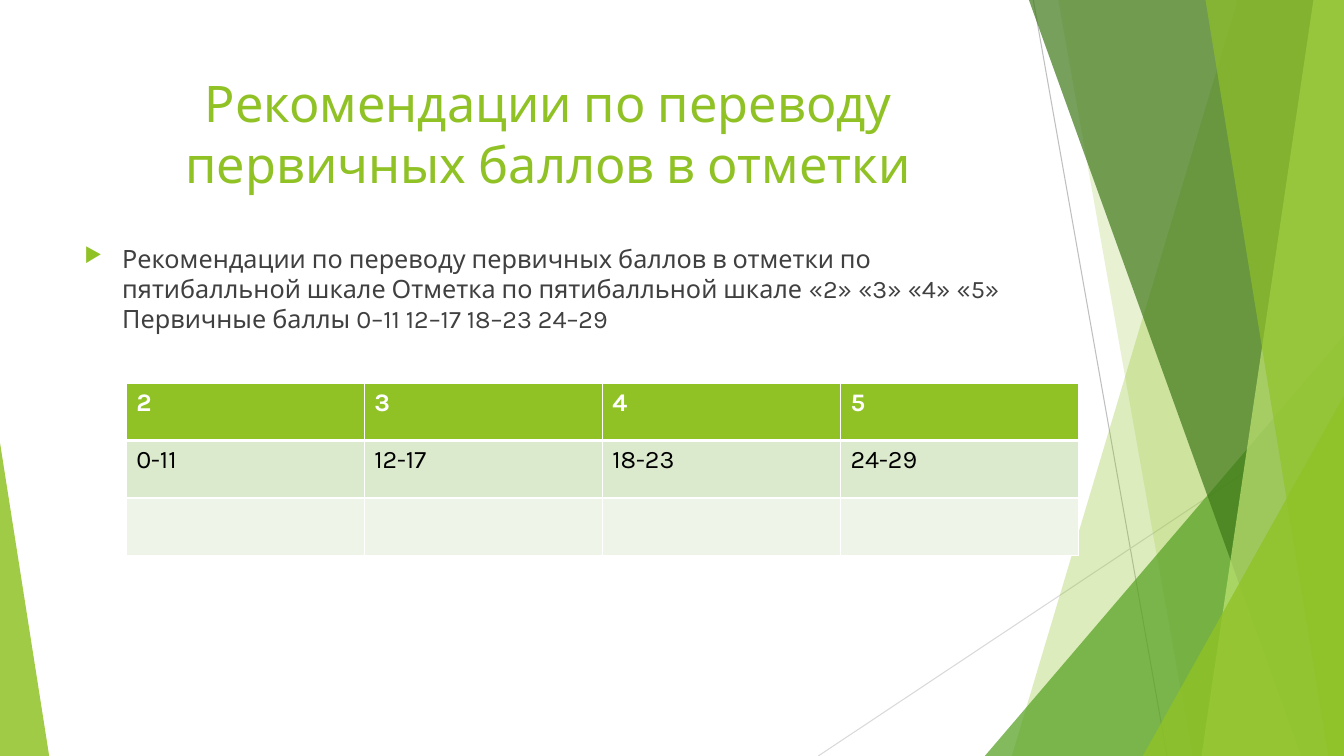
from dataclasses import dataclass

from lxml import etree
from pptx import Presentation
from pptx.dml.color import RGBColor
from pptx.enum.shapes import MSO_CONNECTOR, MSO_SHAPE
from pptx.enum.text import PP_ALIGN
from pptx.oxml import parse_xml
from pptx.oxml.ns import qn
from pptx.util import Cm, Pt

LINE = MSO_CONNECTOR.STRAIGHT
TRIANGLE = MSO_SHAPE.ISOSCELES_TRIANGLE
LEFT, CENTER = PP_ALIGN.LEFT, PP_ALIGN.CENTER

NS = 'xmlns:a="http://schemas.openxmlformats.org/drawingml/2006/main"'
FONT = "Karla"
GREEN, WHITE, BLACK, GREY = "90C226", "FFFFFF", "000000", "404040"
WIDE, HIGH = 33.87, 19.05
TITLE = "Рекомендации по переводу первичных баллов в отметки"
BODY = (
    "Рекомендации по переводу первичных баллов в отметки по пятибалльной шкале "
    "Отметка по пятибалльной шкале «2» «3» «4» «5» "
    "Первичные баллы 0–11 12–17 18–23 24–29"
)


@dataclass
class Ray:
    start: tuple[float, float]
    end: tuple[float, float]
    color: str


@dataclass
class Band:
    """Area from a slanted left edge to the right side of the slide."""
    top: float
    foot: float
    color: str
    alpha: int


@dataclass
class Wedge:
    """Right triangle standing on the foot of the slide."""
    left: float
    top: float
    width: float
    tip: float
    color: str
    alpha: int


@dataclass
class Row:
    texts: list[str]
    fill: str
    color: str
    bold: bool
    above: float
    below: float


RAYS = [
    Ray((26.04, 0), (29.41, HIGH), "BFBFBF"),
    Ray((WIDE, 10.24), (20.62, HIGH), "D9D9D9"),
]
FACETS = [
    Band(31.19, 25.5, GREEN, 30),
    Band(26.67, 30.05, GREEN, 20),
    Wedge(24.82, 8.46, 9.05, 1, "54A021", 72),
    Band(25.93, 32.79, "3F7819", 70),
    Band(33.1, 30.28, "C0E474", 70),
    Band(30.38, 33.48, GREEN, 65),
    Wedge(28.8, 9.98, 5.07, 1, GREEN, 80),
    Wedge(0, 11.15, 1.24, 0, GREEN, 85),
]
ROWS = [
    Row(["2", "3", "4", "5"], GREEN, WHITE, True, 1, 3),
    Row(["0-11", "12-17", "18-23", "24-29"], "DBE9CD", BLACK, False, 3, 1),
    Row([""] * 4, "EEF4E8", BLACK, False, 1, 1),
]


def paint(target, color: str) -> None:
    target.solid()
    target.fore_color.rgb = RGBColor.from_string(color)


def draw_ray(slide, ray: Ray) -> None:
    ends = [Cm(n) for n in ray.start + ray.end]
    line = slide.shapes.add_connector(LINE, *ends)
    paint(line.line.fill, ray.color)
    line.line.width = Pt(0.75)
    etree.SubElement(line._element.spPr, qn("a:effectLst"))


def draw_facet(slide, facet: Band | Wedge) -> None:
    if isinstance(facet, Band):
        form = slide.shapes.build_freeform(Cm(facet.top), Cm(0))
        form.add_line_segments([
            (Cm(WIDE), Cm(0)), (Cm(WIDE), Cm(HIGH)), (Cm(facet.foot), Cm(HIGH)),
        ])
        shape = form.convert_to_shape()
    else:
        shape = slide.shapes.add_shape(
            TRIANGLE, Cm(facet.left), Cm(facet.top),
            Cm(facet.width), Cm(HIGH - facet.top))
        shape.adjustments[0] = facet.tip
    shape.shadow.inherit = False
    shape.line.fill.background()
    paint(shape.fill, facet.color)
    tint = shape._element.spPr.find(".//" + qn("a:srgbClr"))
    etree.SubElement(tint, qn("a:alpha"), val=str(facet.alpha * 1000))


def style(para, size: float, color: str, bold: bool = False) -> None:
    para.font.name = FONT
    para.font.size = Pt(size)
    para.font.bold = bold
    paint(para.font.fill, color)


def add_text(slide, top: float, height: float, text: str,
             size: float, color: str, align):
    box = slide.shapes.add_textbox(Cm(1.88), Cm(top), Cm(23.88), Cm(height))
    box.text_frame.word_wrap = True
    para = box.text_frame.paragraphs[0]
    para.text = text
    para.alignment = align
    style(para, size, color)
    return para


def add_bullet(para) -> None:
    props = para._p.get_or_add_pPr()
    props.set("marL", str(Cm(0.95)))
    props.set("indent", str(-Cm(0.95)))
    parts = [
        f'<a:buClr {NS}><a:srgbClr val="{GREEN}"/></a:buClr>',
        f'<a:buSzPct {NS} val="80000"/>',
        f'<a:buChar {NS} char="▶"/>',
    ]
    font = props.find(qn("a:defRPr"))
    for part in parts:
        font.addprevious(parse_xml(part))


def add_edges(cell, above: float, below: float) -> None:
    props = cell._tc.get_or_add_tcPr()
    widths = {"lnL": 1, "lnR": 1, "lnT": above, "lnB": below}
    for spot, (side, width) in enumerate(widths.items()):
        props.insert(spot, parse_xml(
            f'<a:{side} {NS} w="{Pt(width)}"><a:solidFill>'
            f'<a:srgbClr val="{WHITE}"/></a:solidFill></a:{side}>'))


def add_marks(slide) -> None:
    count = len(ROWS[0].texts)
    table = slide.shapes.add_table(
        len(ROWS), count, Cm(3.18), Cm(9.65), Cm(6 * count), Cm(1.45 * len(ROWS))).table
    table.first_row = table.horz_banding = False
    for line, row in enumerate(ROWS):
        for col, text in enumerate(row.texts):
            cell = table.cell(line, col)
            cell.text = text
            style(cell.text_frame.paragraphs[0], 18, row.color, row.bold)
            paint(cell.fill, row.fill)
            add_edges(cell, row.above, row.below)


def main() -> None:
    deck = Presentation()
    deck.slide_width, deck.slide_height = Cm(WIDE), Cm(HIGH)
    slide = deck.slides.add_slide(deck.slide_layouts[6])
    for ray in RAYS:
        draw_ray(slide, ray)
    for facet in FACETS:
        draw_facet(slide, facet)
    add_text(slide, 1.7, 3.66, TITLE, 36, GREEN, CENTER)
    para = add_text(slide, 6, 10.77, BODY, 18, GREY, LEFT)
    para.space_before = Pt(10)
    add_bullet(para)
    add_marks(slide)
    deck.save("out.pptx")


if __name__ == "__main__":
    main()
